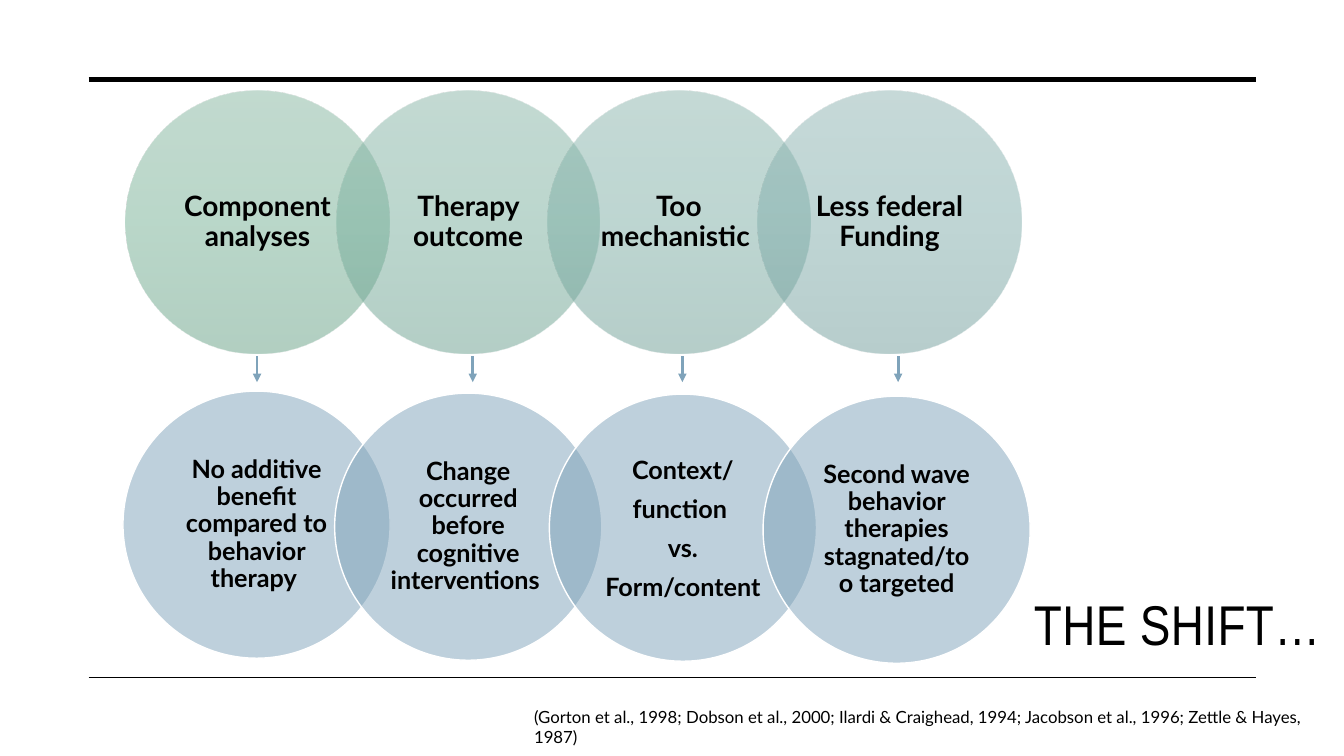
from lxml import etree
from pptx import Presentation
from pptx.dml.color import RGBColor
from pptx.enum.shapes import MSO_CONNECTOR, MSO_SHAPE
from pptx.enum.text import MSO_ANCHOR, PP_ALIGN
from pptx.oxml.ns import qn
from pptx.util import Pt

STRAIGHT, OVAL = MSO_CONNECTOR.STRAIGHT, MSO_SHAPE.OVAL
MIDDLE, CENTER = MSO_ANCHOR.MIDDLE, PP_ALIGN.CENTER
COLORS = {"black": "000000", "white": "FFFFFF", "blue": "7FA3BA"}
BODY_FONT, TITLE_FONT = "Lato", "Arial Narrow"

# Text and gradient stops, top to bottom
REASONS = [
    ("Component analyses", ("87B7A1", "74B195", "64A085")),
    ("Therapy outcome", ("8AB6A8", "78B09E", "689F8E")),
    ("Too mechanistic ", ("8DB6AE", "7CAFA6", "6C9E95")),
    ("Less federal Funding", ("90B5B3", "80AEAC", "6F9D9B")),
]
# Text, line spacing, and offset within the row
OUTCOMES = [
    ("No additive benefit compared to behavior therapy ", 0.9, 0, 0),
    ("Change occurred before cognitive interventions ", 0.9, 151.2, 1.44),
    ("Context/\nfunction \nvs.\nForm/content", 1, 304.56, 2.16),
    ("Second wave behavior therapies stagnated/too targeted", 0.9, 457.2, 3.6),
]
ARROW_OFFSETS = (0, 154.08, 303.84, 457.92)


def rgb(name):
    return RGBColor.from_string(COLORS[name])


def set_half_transparent(color):
    etree.SubElement(color, qn("a:alpha"), val="50000")


def set_font(p, size, name=BODY_FONT, bold=False):
    p.font.size, p.font.name, p.font.bold = Pt(size), name, bold
    p.font.color.rgb = rgb("black")


def add_line(slide, x1, y1, x2, y2, color, width, arrow=False):
    line = slide.shapes.add_connector(STRAIGHT, Pt(x1), Pt(y1), Pt(x2), Pt(y2))
    line.line.color.rgb = rgb(color)
    line.line.width = Pt(width)
    if arrow:
        etree.SubElement(line.line._get_or_add_ln(), qn("a:tailEnd"), type="triangle")
    etree.SubElement(line._element.spPr, qn("a:effectLst"))


def add_circle(slide, x, y, diameter, text, size, inset, spacing=0.9):
    """Add a circle with centred bold text; the caller sets fill and line."""
    sp = slide.shapes.add_shape(OVAL, Pt(x), Pt(y), Pt(diameter), Pt(diameter))
    sp.shadow.inherit = False
    tf = sp.text_frame
    tf.word_wrap = True
    tf.vertical_anchor = MIDDLE
    tf.margin_left = tf.margin_right = Pt(inset)
    tf.margin_top = tf.margin_bottom = Pt(2)
    tf.text = text
    for p in tf.paragraphs:
        p.alignment, p.line_spacing = CENTER, spacing
        p.space_after = Pt(size * 0.35)
        set_font(p, size, bold=True)
    return sp


def fill_gradient(sp, colors):
    """Fill from top to bottom with half-transparent, evenly spaced stops."""
    sp.fill.gradient()
    sp.fill.gradient_angle = 270
    stops = sp._element.spPr.find(".//" + qn("a:gsLst"))
    for stop in list(stops):
        stops.remove(stop)
    for i, color in enumerate(colors):
        stop = etree.SubElement(stops, qn("a:gs"), pos=str(i * 50000))
        set_half_transparent(etree.SubElement(stop, qn("a:srgbClr"), val=color))


def add_reasons(slide, x, y, diameter, step):
    for i, (text, colors) in enumerate(REASONS):
        sp = add_circle(slide, x + i * step, y, diameter, text, 20, 10.3)
        fill_gradient(sp, colors)
        sp.line.fill.background()


def add_outcomes(slide, x, y, diameter):
    for text, spacing, dx, dy in OUTCOMES:
        sp = add_circle(slide, x + dx, y + dy, diameter, text, 18, 10.5, spacing)
        sp.fill.solid()
        sp.fill.fore_color.rgb = rgb("blue")
        set_half_transparent(sp._element.spPr.find(".//" + qn("a:srgbClr")))
        sp.line.color.rgb = rgb("white")
        sp.line.width = Pt(1)


def add_arrows(slide, x, y, length):
    for dx in ARROW_OFFSETS:
        add_line(slide, x + dx, y, x + dx, y + length, "blue", 2, arrow=True)


def add_text(slide, x, y, w, h, text, size, font=BODY_FONT):
    tf = slide.shapes.add_textbox(Pt(x), Pt(y), Pt(w), Pt(h)).text_frame
    tf.word_wrap = True
    p = tf.paragraphs[0]
    p.text = text
    set_font(p, size, font)
    return p


def main():
    prs = Presentation()
    prs.slide_width, prs.slide_height = Pt(960), Pt(540)
    slide = prs.slides.add_slide(prs.slide_layouts[6])
    for y, width in ((56.88, 3.5), (483.84, 1)):
        add_line(slide, 63.36, y, 897.12, y, "black", width)
    title = add_text(slide, 731.5, 417.6, 309.6, 78.5, "THE SHIFT…", 40, TITLE_FONT)
    title.runs[0].font._element.set("spc", "30")
    add_reasons(slide, 90, 64.8, 187.92, 150.48)
    add_outcomes(slide, 87.84, 279.36, 190.8)
    add_arrows(slide, 183.6, 254.5, 18.5)
    add_text(slide, 374.4, 501.12, 585.36, 21.6,
             "(Gorton et al., 1998; Dobson et al., 2000; Ilardi & Craighead, 1994; "
             "Jacobson et al., 1996; Zettle & Hayes, 1987)", 12)
    prs.save("out.pptx")


if __name__ == "__main__":
    main()
